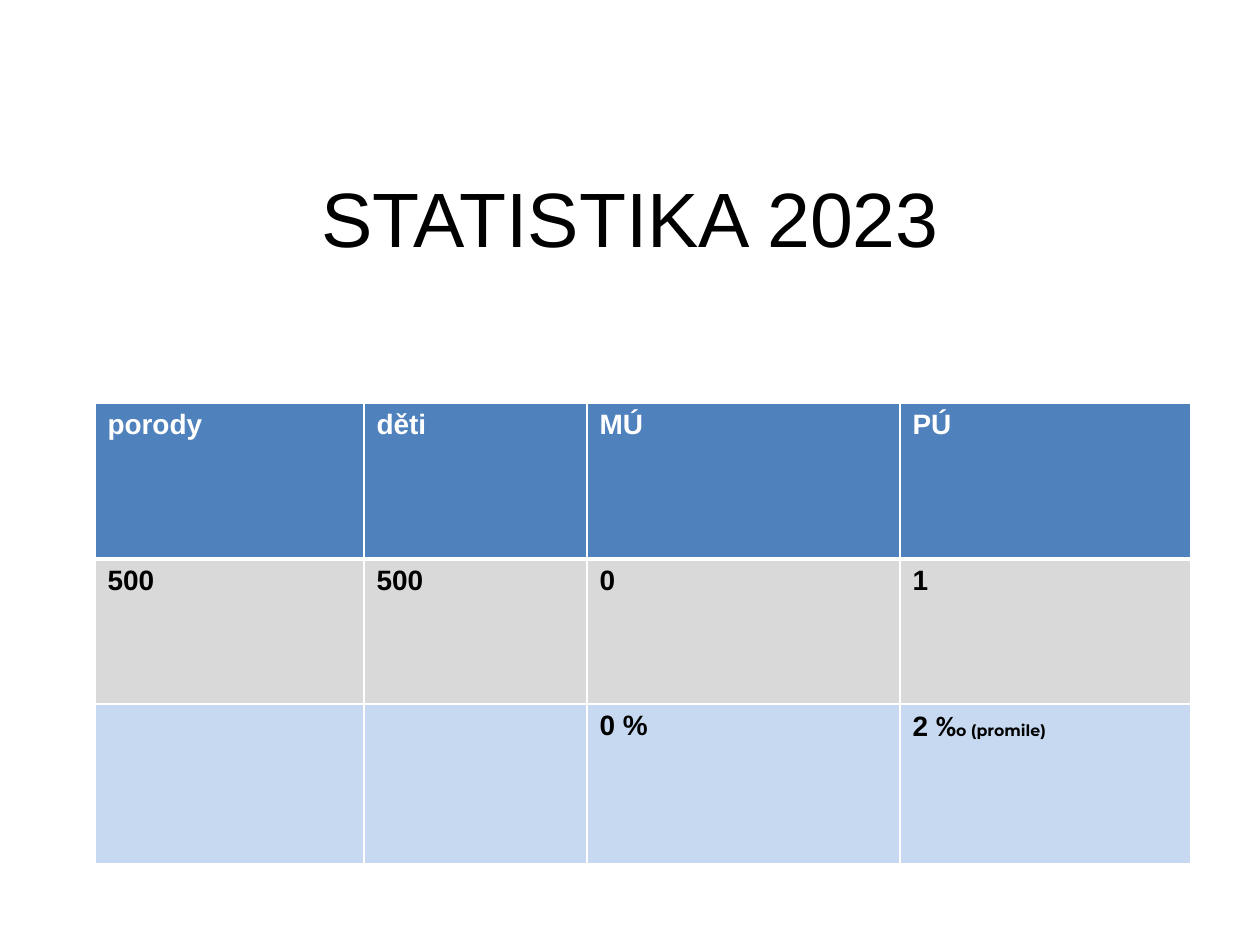
from lxml.etree import SubElement
from pptx import Presentation
from pptx.dml.color import RGBColor
from pptx.enum.text import MSO_ANCHOR as Anchor, PP_ALIGN as Align
from pptx.oxml.ns import qn
from pptx.util import Inches, Pt

PX_PER_INCH = 126
WHITE, BLACK = "FFFFFF", "000000"
THIN, THICK = 0.96, 3


def px(length):
    return Inches(length / PX_PER_INCH)


def rgb(color):
    return RGBColor.from_string(color)


def set_attributes(target, values):
    for name, value in values.items():
        setattr(target, name, value)


class StatisticsSlide:
    font = "Arial"
    cell_size = 16
    title_size = 44

    def __init__(self, presentation):
        self.slide = presentation.slides.add_slide(presentation.slide_layouts[6])

    def run(self, paragraph, text, size, color, bold=False, font=None):
        run = paragraph.add_run()
        run.text = text
        set_attributes(run.font, {"name": font or self.font, "size": Pt(size), "bold": bold})
        run.font.color.rgb = rgb(color)

    def title(self, text, left, top, width, height, bottom_inset):
        shape = self.slide.shapes.add_textbox(px(left), px(top), px(width), px(height))
        frame = shape.text_frame
        set_attributes(frame, {
            "word_wrap": True, "vertical_anchor": Anchor.MIDDLE,
            "margin_left": 0, "margin_top": 0, "margin_right": 0,
            "margin_bottom": px(bottom_inset),
        })
        paragraph = frame.paragraphs[0]
        paragraph.alignment = Align.CENTER
        self.run(paragraph, text, self.title_size, BLACK)

    def borders(self, cell, widths):
        """Draw white cell borders; widths in points: left, right, top, bottom."""
        properties = cell._tc.get_or_add_tcPr()
        for index, (side, width) in enumerate(zip("LRTB", widths)):
            line = properties.makeelement(qn(f"a:ln{side}"), {"w": str(Pt(width))})
            fill = SubElement(line, qn("a:solidFill"))
            SubElement(fill, qn("a:srgbClr"), val=WHITE)
            properties.insert(index, line)

    def table(self, left, top, columns, heights, rows, styles):
        """Each cell is a list of (text, format) runs; each style is (fill, text color)."""
        table = self.slide.shapes.add_table(
            len(heights), len(columns), px(left), px(top),
            px(sum(columns)), px(sum(heights))).table
        for column, width in zip(table.columns, columns):
            column.width = px(width)
        for index, (cells, height, (fill, color)) in enumerate(zip(rows, heights, styles)):
            table.rows[index].height = px(height)
            widths = (THIN, THIN, THICK if index == 1 else THIN, THICK if index == 0 else THIN)
            for cell, runs in zip(table.rows[index].cells, cells):
                cell.fill.solid()
                cell.fill.fore_color.rgb = rgb(fill)
                self.borders(cell, widths)
                for text, changes in runs:
                    style = {"size": self.cell_size, "color": color, "bold": True, **changes}
                    self.run(cell.text_frame.paragraphs[0], text, **style)


def plain(*texts):
    return [[(text, {})] if text else [] for text in texts]


def main():
    presentation = Presentation()
    set_attributes(presentation, {"slide_width": Inches(10), "slide_height": Inches(7.5)})
    page = StatisticsSlide(presentation)
    page.title("STATISTIKA 2023", 95, 26, 1071, 470, bottom_inset=88)

    per_mille = [("2 ", {}), ("%", {"font": "Calibri"}),
                 ("o (promile)", {"font": "Montserrat", "size": 9})]
    page.table(
        95, 403, columns=[269, 223, 313, 291], heights=[156, 145, 160],
        rows=[
            plain("porody", "děti", "MÚ", "PÚ"),
            plain("500", "500", "0", "1"),
            plain("", "", "0 %") + [per_mille],
        ],
        styles=[("4F81BD", WHITE), ("D9D9D9", BLACK), ("C6D9F1", BLACK)])
    presentation.save("out.pptx")


if __name__ == "__main__":
    main()
